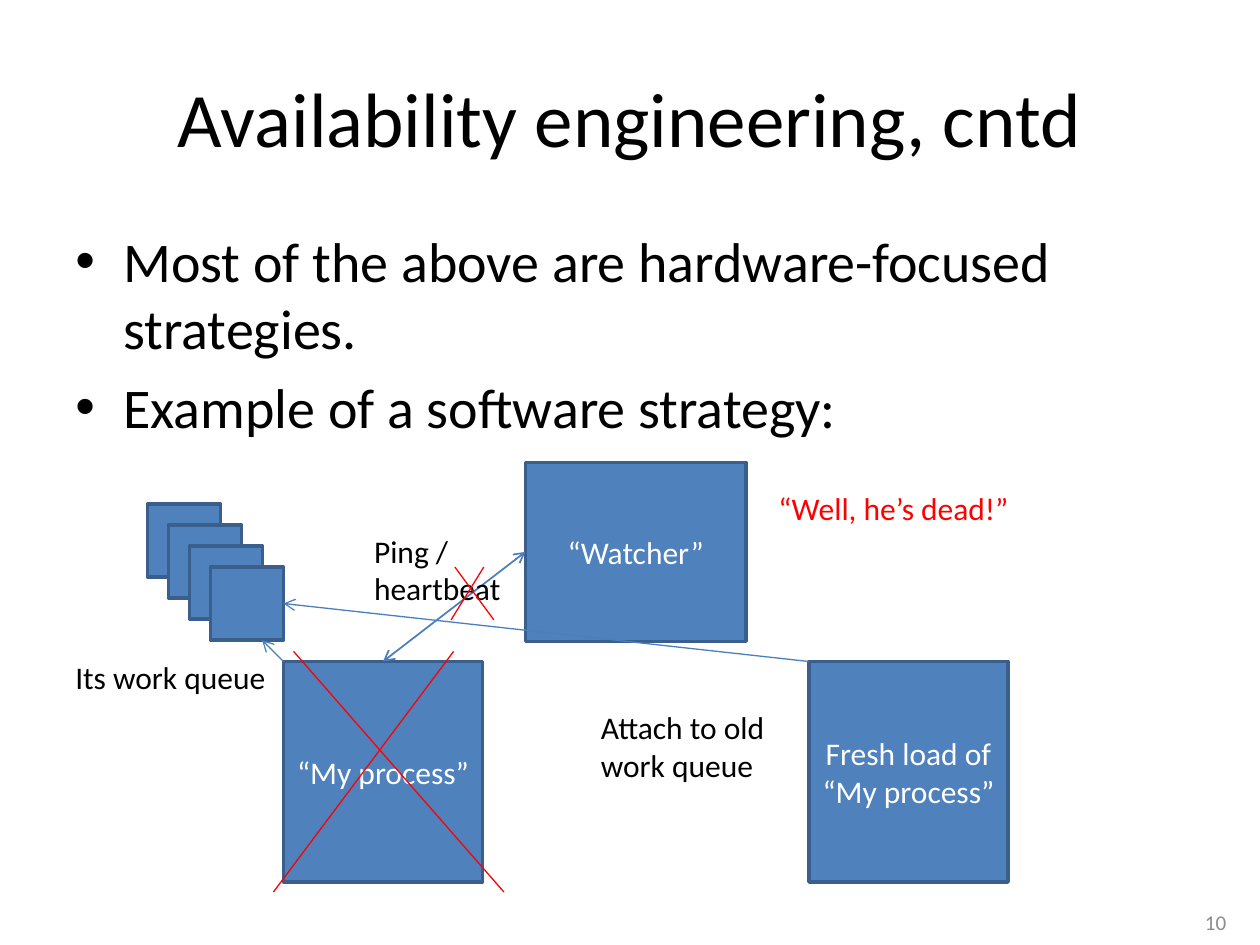
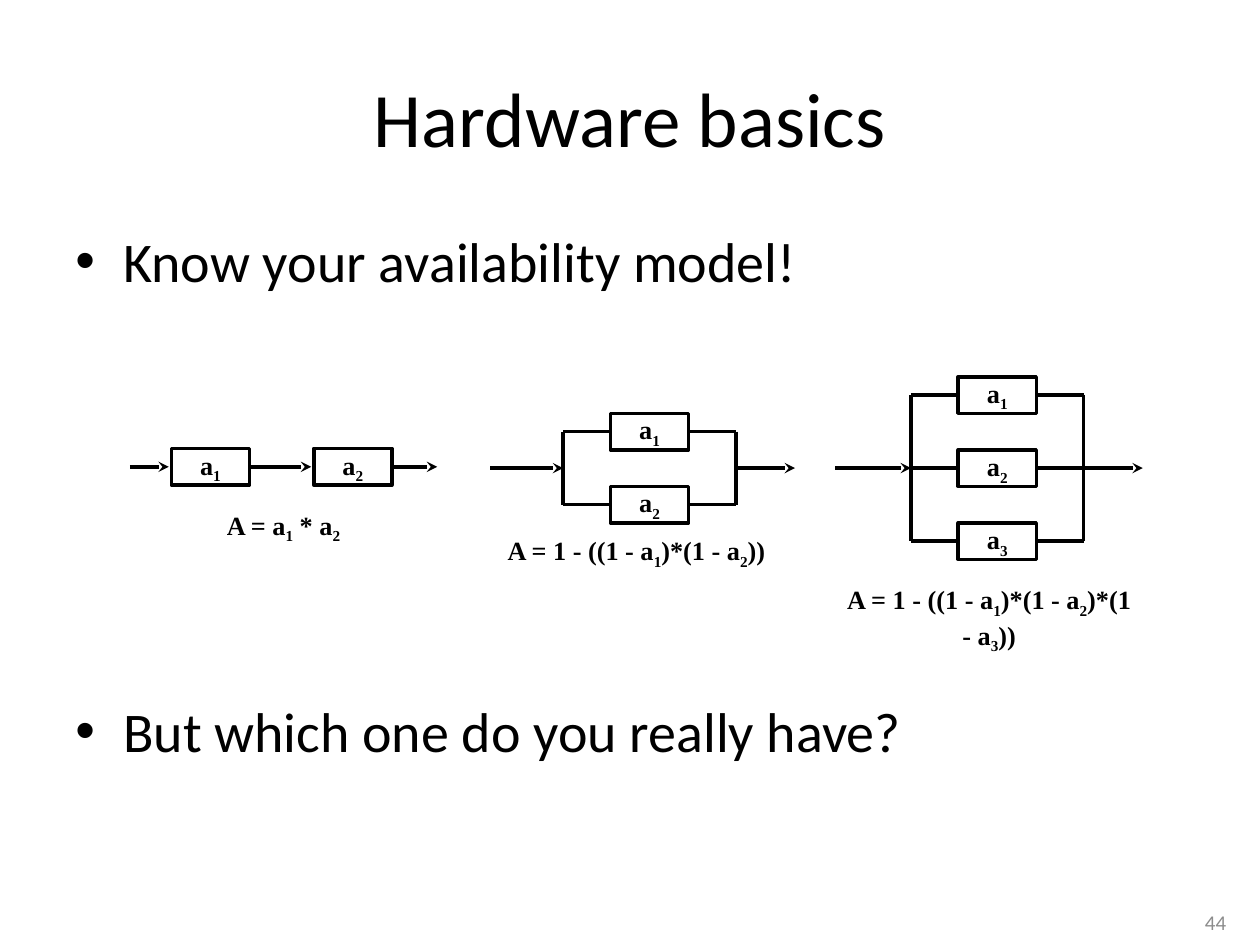
from lxml.etree import SubElement
from pptx import Presentation
from pptx.dml.color import RGBColor
from pptx.enum.shapes import MSO_CONNECTOR, MSO_SHAPE
from pptx.enum.text import MSO_ANCHOR as ANCHOR, PP_ALIGN as ALIGN
from pptx.oxml.ns import qn
from pptx.util import Inches, Pt

BLACK, WHITE, RED, GREY = "000000", "FFFFFF", "FF0000", "8C8C8C"
BLUE, BLUE_EDGE, BLUE_LINE = "4F81BD", "3A5F8C", "4B7EBC"

TITLE = dict(name="Calibri", size=Pt(44))
BODY = dict(name="Calibri", size=Pt(32))
LABEL = dict(name="Calibri", size=Pt(18))
FOOTER = dict(name="Calibri", size=Pt(12))
FORMULA = dict(name="Times New Roman", size=Pt(15), bold=True)

TIGHT = dict(margin_left=Inches(0.06), margin_right=Inches(0.06),
             margin_top=Inches(0.03), margin_bottom=Inches(0.03),
             word_wrap=False)
MIDDLE = dict(vertical_anchor=ANCHOR.MIDDLE, word_wrap=True)

UNIT_W, UNIT_H, UNIT_STEP = 0.62, 0.29, 0.58
RAIL_GAP, RAIL_OUT = 1.37, 0.47
CAPTION_H = 0.31


def rgb(value):
    return RGBColor.from_string(value)


def apply(target, formats):
    for key, value in formats.items():
        setattr(target, key, value)


def add_run(p, text, style, color, subscript=False):
    r = p.add_run()
    r.text = text
    apply(r.font, style)
    r.font.color.rgb = rgb(color)
    if subscript:
        r._r.get_or_add_rPr().set("baseline", "-25000")


def write(sp, lines, style, color=BLACK, align=ALIGN.LEFT, frame=None):
    tf = sp.text_frame
    apply(tf, frame or {"word_wrap": False})
    for i, line in enumerate(lines):
        p = tf.paragraphs[0] if i == 0 else tf.add_paragraph()
        p.alignment = align
        first, *rest = line.split("_")
        add_run(p, first, style, color)
        for part in rest:
            add_run(p, part[0], style, color, subscript=True)
            if part[1:]:
                add_run(p, part[1:], style, color)
    return tf


def text_box(s, box, lines, style, **options):
    sp = s.shapes.add_textbox(*map(Inches, box))
    return write(sp, lines, style, **options)


def rect(s, box, fill, edge):
    sp = s.shapes.add_shape(MSO_SHAPE.RECTANGLE, *map(Inches, box))
    sp.shadow.inherit = False
    sp.fill.solid()
    sp.fill.fore_color.rgb = rgb(fill)
    sp.line.color.rgb = rgb(edge)
    sp.line.width = Pt(2)
    return sp


def line(s, start, end, color=BLACK, width=2, head=None, tail=None):
    cx = s.shapes.add_connector(MSO_CONNECTOR.STRAIGHT,
                                *map(Inches, (*start, *end)))
    cx.line.color.rgb = rgb(color)
    cx.line.width = Pt(width)
    ln = cx.line._get_or_add_ln()
    for tag, kind in (("a:headEnd", head), ("a:tailEnd", tail)):
        if kind:
            SubElement(ln, qn(tag), type=kind)
    SubElement(cx._element.spPr, qn("a:effectLst"))


def bullets(s, box, items):
    tf = text_box(s, box, [text for text, _ in items], BODY,
                  frame={"word_wrap": True})
    for p, (_, gap) in zip(tf.paragraphs, items):
        p.space_before = Pt(gap)
        pPr = p._p.get_or_add_pPr()
        pPr.set("marL", str(Inches(0.38)))
        pPr.set("indent", str(-Inches(0.38)))
        SubElement(pPr, qn("a:buFont"), typeface="Arial")
        SubElement(pPr, qn("a:buChar"), char="•")


def base_slide(prs, title, number, items):
    s = prs.slides.add_slide(prs.slide_layouts[6])
    text_box(s, (7.5, 7.12, 2.33, 0.4), [number], FOOTER, color=GREY,
             align=ALIGN.RIGHT, frame=MIDDLE)
    text_box(s, (0.5, 0.3, 9, 1.25), [title], TITLE,
             align=ALIGN.CENTER, frame=MIDDLE)
    bullets(s, (0.5, 1.75, 9, 4.95), items)
    return s


def process(s, box, text):
    write(rect(s, box, BLUE, BLUE_EDGE), [text], LABEL, color=WHITE,
          align=ALIGN.CENTER, frame=MIDDLE)


def work_queue(s, box):
    x, y, size, count = box
    for i in range(count):
        rect(s, (x + i / 6, y + i / 6, size, size), BLUE, BLUE_EDGE)


def cross(s, top, bottom, falling, rising):
    for x1, x2 in (falling, rising):
        line(s, (x1, top), (x2, bottom), RED, 0.75)


def watcher_diagram(s, box):
    x, y = box

    def at(dx, dy, *size):
        return (x + dx, y + dy, *size)

    process(s, at(1.08, 1.58, 1.58, 1.75), "“My process”")
    work_queue(s, at(0, 0.33, 0.58, 4))
    process(s, at(3, 0, 1.75, 1.42), "“Watcher”")
    line(s, at(3, 0.71), at(1.87, 1.58), BLUE_LINE, 1, "arrow", "arrow")
    process(s, at(5.25, 1.58, 1.58, 1.75), "Fresh load of “My process”")
    for start, end in ((at(1.08, 1.58), at(0.91, 1.41)),
                       (at(5.25, 1.58), at(1.08, 1.12))):
        line(s, start, end, BLUE_LINE, 0.75, tail="arrow")
    for place, lines, color in (
            (at(-0.67, 1.5, 1.73, 0.4), ["Its work queue"], BLACK),
            (at(1.7, 0.5, 1.22, 0.71), ["Ping /", "heartbeat"], BLACK),
            (at(4.91, 0.16, 2.05, 0.4), ["“Well, he’s dead!”"], RED),
            (at(3.5, 1.9, 1.58, 0.71), ["Attach to old", "work queue"], BLACK)):
        text_box(s, place, lines, LABEL, color=color)
    cross(s, y + 1.5, y + 3.41, (x + 1.16, x + 2.83), (x + 2.43, x + 1))
    cross(s, y + 0.83, y + 1.25, (x + 2.44, x + 2.75), (x + 2.67, x + 2.41))


def unit(s, x, mid, index):
    sp = rect(s, (x, mid - UNIT_H / 2, UNIT_W, UNIT_H), WHITE, BLACK)
    write(sp, [f"a_{index}"], FORMULA, align=ALIGN.CENTER,
          frame={**TIGHT, "vertical_anchor": ANCHOR.MIDDLE})


def caption(s, box, text, shift=0):
    x, y, w, h = box
    text_box(s, (x + shift, y + h - CAPTION_H, w, CAPTION_H), [text],
             FORMULA, align=ALIGN.CENTER, frame=TIGHT)


def series_model(s, box, formula):
    x, y, w, h = box
    mid = y + UNIT_H / 2
    for start, end in ((0, 0.31), (0.96, 1.44), (2.1, w)):
        line(s, (x + start, mid), (x + end, mid), tail="stealth")
    unit(s, x + 0.33, mid, 1)
    unit(s, x + 1.46, mid, 2)
    caption(s, box, formula)


def parallel_model(s, box, count, formula, shift=0):
    x, y, w, h = box
    right = x + w - RAIL_OUT
    left = right - RAIL_GAP
    unit_x = (left + right - UNIT_W) / 2
    mids = [y + UNIT_H / 2 + i * UNIT_STEP for i in range(count)]
    axis = (mids[0] + mids[-1]) / 2
    for rail in (left, right):
        line(s, (rail, mids[0]), (rail, mids[-1]))
    for i, mid in enumerate(mids, 1):
        line(s, (left, mid), (unit_x, mid))
        line(s, (unit_x + UNIT_W, mid), (right, mid))
        unit(s, unit_x, mid, i)
    line(s, (x, axis), (left, axis), tail="stealth")
    line(s, (right, axis), (x + w, axis), tail="stealth")
    caption(s, box, formula, shift)


def main():
    prs = Presentation()
    prs.slide_width, prs.slide_height = Inches(10), Inches(7.5)

    s = base_slide(prs, "Availability engineering, cntd", "10", [
        ("Most of the above are hardware-focused strategies.", 0),
        ("Example of a software strategy:", 6.4)])
    watcher_diagram(s, (1.17, 3.67))

    s = base_slide(prs, "Hardware basics", "44", [
        ("Know your availability model!", 0),
        ("But which one do you really have?", 230)])
    series_model(s, (1.03, 3.56, 2.44, 0.76), "A = a_1 * a_2")
    parallel_model(s, (3.89, 3.28, 2.42, 1.24), 2,
                   "A = 1 - ((1 - a_1)*(1 - a_2))", shift=-0.05)
    parallel_model(s, (6.63, 2.99, 2.44, 1.92), 3,
                   "A = 1 - ((1 - a_1)*(1 - a_2)*(1 - a_3))")

    prs.save("out.pptx")


if __name__ == "__main__":
    main()
